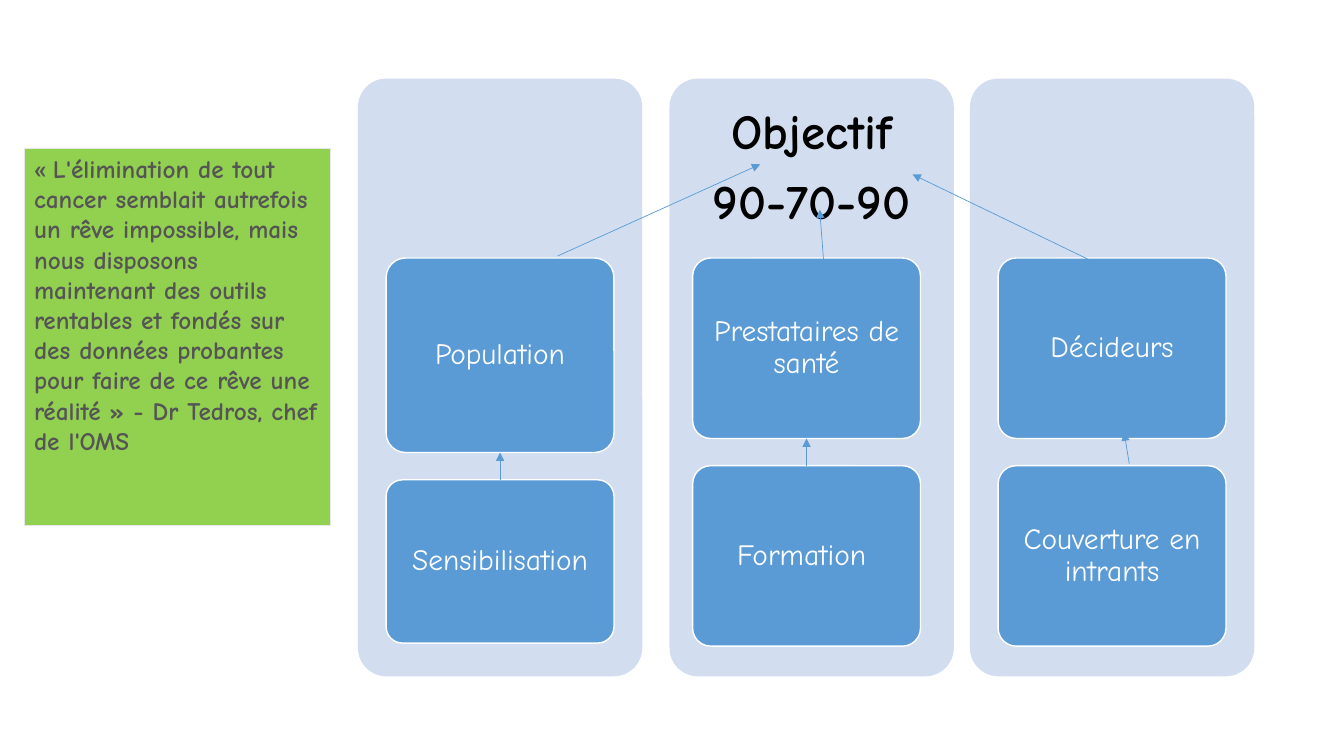
from lxml import etree
from pptx import Presentation
from pptx.dml.color import RGBColor
from pptx.enum.shapes import MSO_CONNECTOR, MSO_SHAPE
from pptx.enum.text import MSO_ANCHOR, PP_ALIGN
from pptx.oxml.ns import qn
from pptx.util import Pt

PX = 9144
RECTANGLE = MSO_SHAPE.RECTANGLE
ROUNDED = MSO_SHAPE.ROUNDED_RECTANGLE
STRAIGHT = MSO_CONNECTOR.STRAIGHT
MIDDLE = MSO_ANCHOR.MIDDLE
TOP = MSO_ANCHOR.TOP
CENTER = PP_ALIGN.CENTER
LEFT = PP_ALIGN.LEFT
TOP_SIDE, BOTTOM_SIDE = 0, 2

PALE_BLUE = RGBColor(0xD2, 0xDE, 0xEF)
BLUE = RGBColor(0x5B, 0x9B, 0xD5)
GREEN = RGBColor(0x92, 0xD0, 0x50)
LIGHT_GRAY = RGBColor(0xE7, 0xE6, 0xE6)
GRAY = RGBColor(0x55, 0x55, 0x55)
WHITE = RGBColor(0xFF, 0xFF, 0xFF)
BLACK = RGBColor(0x00, 0x00, 0x00)

FONT = "Comic Neue"
QUOTE_MARK_FONT = "Roboto"
PANEL_TOP, PANEL_WIDTH, PANEL_HEIGHT = 78, 282, 593
BOX_TOP, BOX_WIDTH = 256, 226
HEADING = ["Objectif", "90-70-90"]
QUOTE = [
    ("« ", QUOTE_MARK_FONT),
    ("L'élimination de tout cancer semblait autrefois un rêve impossible, "
     "mais nous disposons maintenant des outils rentables et fondés sur des "
     "données probantes pour faire de ce rêve une réalité » - Dr Tedros, "
     "chef de l'OMS", FONT),
]

# panel left, box left, then label, height and gap of the stacked boxes
COLUMNS = [
    (355, 383, 27, [("Population", 193), ("Sensibilisation", 162)]),
    (664, 687, 27, [("Prestataires de santé", 179), ("Formation ", 179)]),
    (962, 990, 27, [("Décideurs", 179), ("Couverture en intrants", 179)]),
]
FREE_ARROWS = [
    ((1120, 460), (1115, 429)),
    ((553, 254), (754, 163)),
    ((817, 260), (813, 208)),
    ((1085, 260), (905, 173)),
]


def scaled(*lengths):
    return [length * PX for length in lengths]


def add_block(page, kind, area, fill, line=None, weight=1):
    block = page.shapes.add_shape(kind, *scaled(*area))
    block.shadow.inherit = False
    if kind == ROUNDED:
        block.adjustments[0] = 0.1
    block.fill.solid()
    block.fill.fore_color.rgb = fill
    if line is None:
        block.line.fill.background()
    else:
        block.line.color.rgb = line
        block.line.width = Pt(weight)
    return block


def set_frame(frame, anchor, side, end):
    frame.word_wrap = True
    frame.vertical_anchor = anchor
    frame.margin_left = frame.margin_right = side * PX
    frame.margin_top = frame.margin_bottom = end * PX


def format_span(span, size, color, bold=False, font=FONT):
    span.font.name = font
    span.font.size = Pt(size)
    span.font.bold = bold
    span.font.color.rgb = color


def write_centered(frame, lines, size, color, bold=False):
    frame.text = "\n".join(lines)
    for para in frame.paragraphs:
        para.alignment = CENTER
        para.line_spacing = 0.9
        para.space_after = Pt(round(size * 0.35))
        format_span(para.runs[0], size, color, bold)


def add_heading(page, area):
    heading = page.shapes.add_textbox(*scaled(*area))
    set_frame(heading.text_frame, MIDDLE, 15, 15)
    write_centered(heading.text_frame, HEADING, 35, BLACK, True)


def add_column(page, panel_left, box_left, gap, labels):
    add_block(page, ROUNDED,
              (panel_left, PANEL_TOP, PANEL_WIDTH, PANEL_HEIGHT), PALE_BLUE)
    boxes = []
    top = BOX_TOP
    for label, height in labels:
        box = add_block(page, ROUNDED, (box_left, top, BOX_WIDTH, height),
                        BLUE, WHITE)
        set_frame(box.text_frame, MIDDLE, 11, 9)
        write_centered(box.text_frame, [label], 21, WHITE)
        boxes.append(box)
        top += height + gap
    return boxes


def add_quote(page, area):
    quote = add_block(page, RECTANGLE, area, GREEN, LIGHT_GRAY, 0.75)
    set_frame(quote.text_frame, TOP, 10, 5)
    para = quote.text_frame.paragraphs[0]
    para.alignment = LEFT
    for text, font in QUOTE:
        span = para.add_run()
        span.text = text
        format_span(span, 18, GRAY, True, font)


def add_arrow(page, start, end):
    arrow = page.shapes.add_connector(STRAIGHT, *scaled(*start, *end))
    arrow.line.color.rgb = BLUE
    arrow.line.width = Pt(0.5)
    etree.SubElement(arrow.line._get_or_add_ln(), qn("a:tailEnd"),
                     type="triangle")
    etree.SubElement(arrow._element.spPr, qn("a:effectLst"))
    return arrow


def join_boxes(page, lower, upper):
    arrow = add_arrow(page, (0, 0), (0, 0))
    arrow.begin_connect(lower, TOP_SIDE)
    arrow.end_connect(upper, BOTTOM_SIDE)


def main():
    deck = Presentation()
    deck.slide_width, deck.slide_height = scaled(1333, 750)
    page = deck.slides.add_slide(deck.slide_layouts[6])

    population, providers, _ = [add_column(page, *column) for column in COLUMNS]
    add_heading(page, (COLUMNS[1][0], PANEL_TOP, PANEL_WIDTH,
                       BOX_TOP - PANEL_TOP))
    add_quote(page, (24, 147, 304, 374))

    for upper, lower in (population, providers):
        join_boxes(page, lower, upper)
    for start, end in FREE_ARROWS:
        add_arrow(page, start, end)

    deck.save("out.pptx")


if __name__ == "__main__":
    main()
